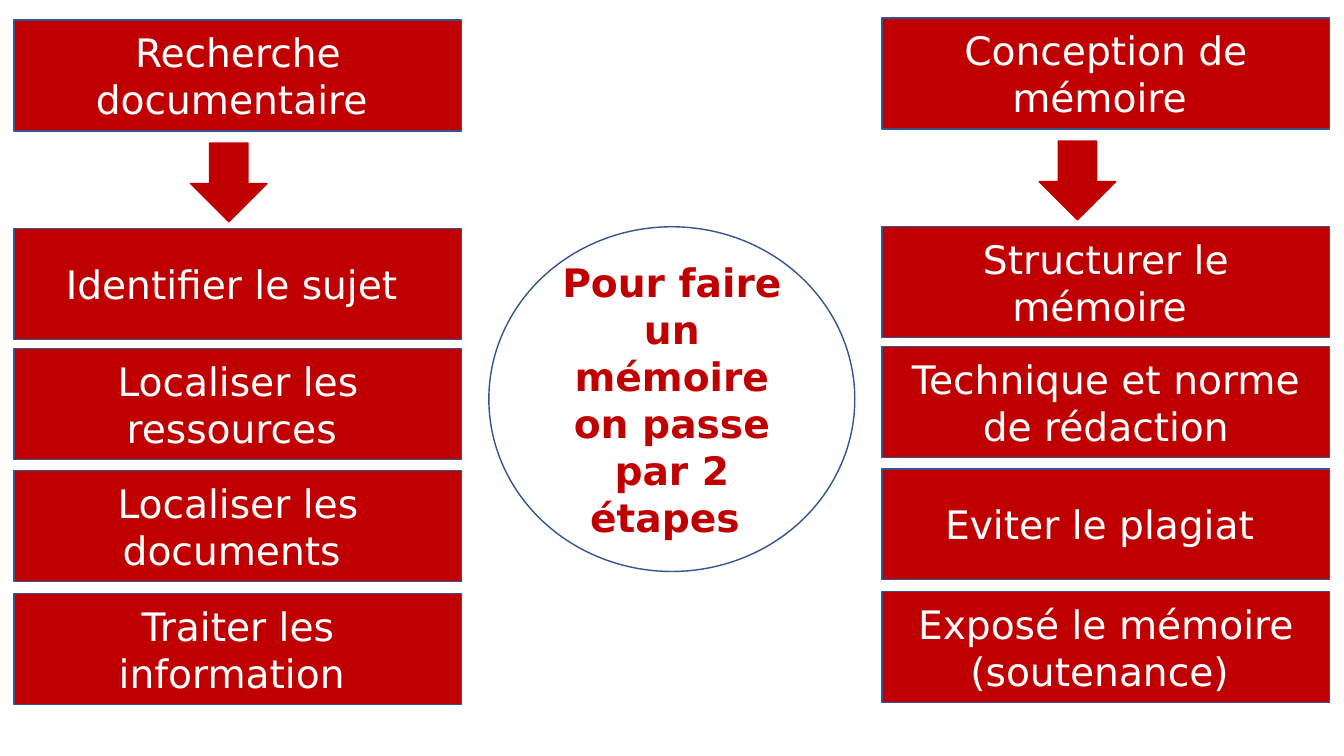
from pptx import Presentation
from pptx.dml.color import RGBColor
from pptx.enum.shapes import MSO_SHAPE as Preset
from pptx.enum.text import MSO_ANCHOR as Anchor, PP_ALIGN as Align
from pptx.util import Pt

# Content: the first step of each column is its heading
COLUMNS = [
    {"left": 10.1, "top": 14.4, "arrow_left": 136.1, "steps": [
        "Recherche documentaire ",
        "Identifier le sujet ",
        "Localiser les ressources ",
        "Localiser les documents ",
        "Traiter les information ",
    ]},
    {"left": 630, "top": 13, "arrow_left": 742.3, "steps": [
        "Conception de mémoire ",
        "Structurer le mémoire ",
        "Technique et norme de rédaction",
        "Eviter le plagiat ",
        "Exposé le mémoire (soutenance) ",
    ]},
]
CENTRE_TEXT = "Pour faire un mémoire on passe par 2 étapes "

# Format and layout, in points
RED = RGBColor(0xC0, 0x00, 0x00)
BLUE = RGBColor(0x32, 0x54, 0x91)
WHITE = RGBColor(0xFF, 0xFF, 0xFF)
FONT = {"name": "DejaVu Sans", "size": Pt(28)}
BOX_WIDTH, BOX_HEIGHT = 319.7, 79.2
STEP_OFFSETS = [0, 149, 234.7, 321.9, 409.7]
ARROW_WIDTH, ARROW_HEIGHT, ARROW_OFFSET = 54.7, 56.2, 87.8
CIRCLE = (349.2, 162, 261.4, 246.2)

presentation = Presentation()
presentation.slide_width, presentation.slide_height = Pt(960), Pt(540)
slide = presentation.slides.add_slide(presentation.slide_layouts[6])


def add_preset(preset, bounds, fill, line):
    shape = slide.shapes.add_shape(preset, *map(Pt, bounds))
    shape.shadow.inherit = False
    shape.fill.solid()
    shape.fill.fore_color.rgb = fill
    shape.line.color.rgb = line
    shape.line.width = Pt(1)
    return shape


def add_text(shape, text, color, bold=False):
    frame = shape.text_frame
    frame.word_wrap = True
    frame.vertical_anchor = Anchor.MIDDLE
    paragraph = frame.paragraphs[0]
    paragraph.alignment = Align.CENTER
    run = paragraph.add_run()
    run.text = text
    for name, value in {**FONT, "bold": bold}.items():
        setattr(run.font, name, value)
    run.font.color.rgb = color


# Step columns, each with an arrow under its heading
for column in COLUMNS:
    for text, offset in zip(column["steps"], STEP_OFFSETS):
        bounds = (column["left"], column["top"] + offset, BOX_WIDTH, BOX_HEIGHT)
        add_text(add_preset(Preset.RECTANGLE, bounds, RED, BLUE), text, WHITE)
    arrow_bounds = (column["arrow_left"], column["top"] + ARROW_OFFSET,
                    ARROW_WIDTH, ARROW_HEIGHT)
    add_preset(Preset.DOWN_ARROW, arrow_bounds, RED, RED)

# Central message
circle = add_preset(Preset.OVAL, CIRCLE, WHITE, BLUE)
add_text(circle, CENTRE_TEXT, RED, bold=True)

presentation.save("out.pptx")
